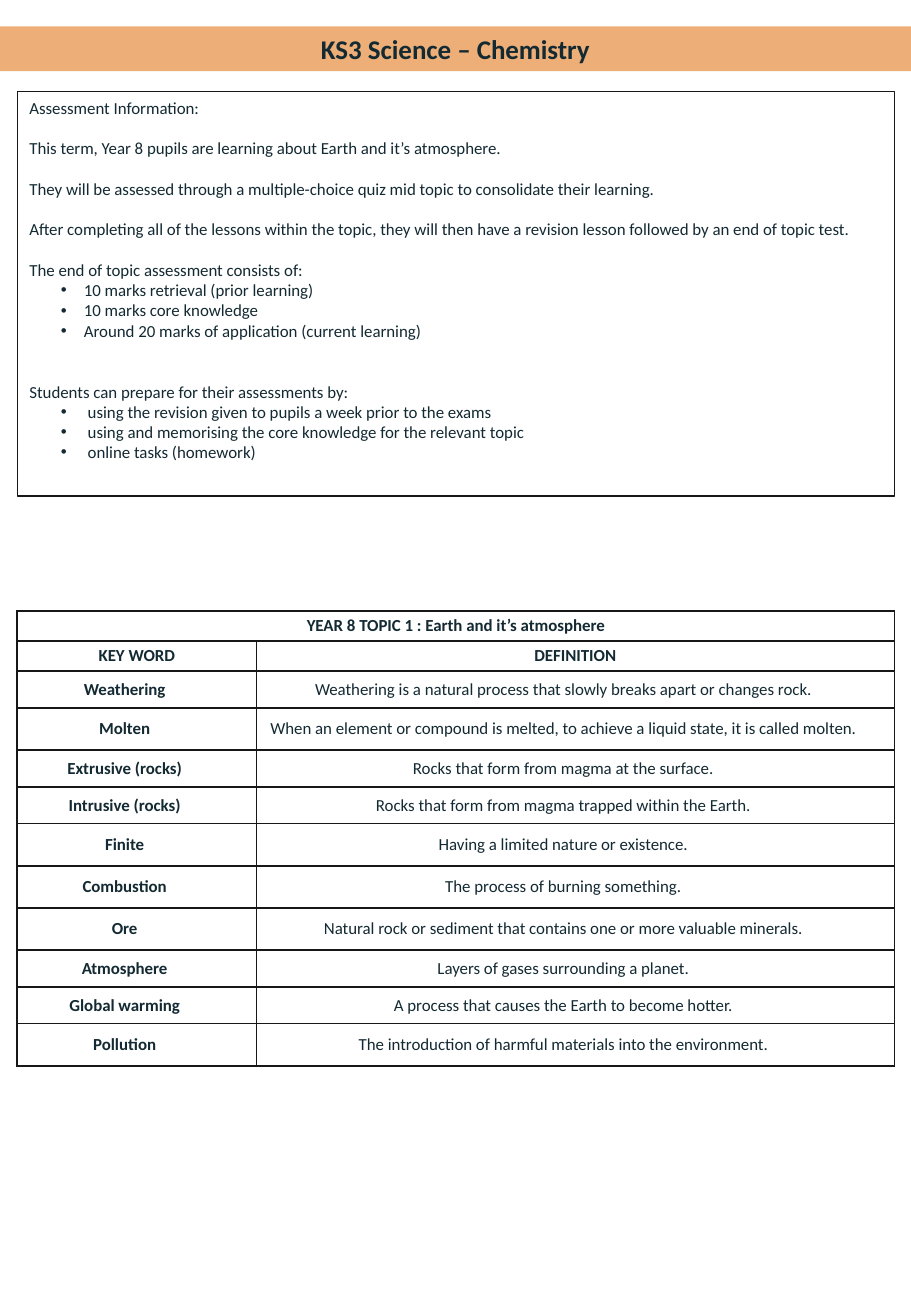
from dataclasses import dataclass
from typing import Any

from lxml import etree
from pptx import Presentation
from pptx.dml.color import RGBColor
from pptx.enum.text import MSO_ANCHOR, MSO_AUTO_SIZE, PP_ALIGN
from pptx.oxml.ns import qn
from pptx.util import Cm, Pt

LEFT, CENTER = PP_ALIGN.LEFT, PP_ALIGN.CENTER
TOP, MIDDLE = MSO_ANCHOR.TOP, MSO_ANCHOR.MIDDLE
NO_AUTOFIT = MSO_AUTO_SIZE.NONE

COLOURS = {"ink": "142A33", "border": "181717", "banner": "EDAF77"}
FONT = "Calibri"
TEXT_SIZE, TITLE_SIZE = 10, 16
LINE_GAP = 12  # one line of body text, in points
PAGE_LEFT, PAGE_WIDTH = 0.36, 18.34


@dataclass
class InfoLine:
    text: str
    gap_lines: int = 0
    bullet_indent: float = 0  # cm from the text edge; 0 means no bullet


@dataclass
class KeyWord:
    word: str
    definition: str
    height: float


MARKS_INDENT, ADVICE_INDENT = 1.14, 1.22
BULLET_LEFT = 0.66
INFO_LINES = [
    InfoLine("Assessment Information:"),
    InfoLine("This term, Year 8 pupils are learning about Earth and it’s atmosphere.", 1),
    InfoLine("They will be assessed through a multiple-choice quiz mid topic to consolidate their learning.", 1),
    InfoLine("After completing all of the lessons within the topic, they will then have a revision lesson "
             "followed by an end of topic test.", 1),
    InfoLine("The end of topic assessment consists of:", 1),
    InfoLine("10 marks retrieval (prior learning)", 0, MARKS_INDENT),
    InfoLine("10 marks core knowledge", 0, MARKS_INDENT),
    InfoLine("Around 20 marks of application (current learning)", 0, MARKS_INDENT),
    InfoLine("Students can prepare for their assessments by:", 2),
    InfoLine("using the revision given to pupils a week prior to the exams", 0, ADVICE_INDENT),
    InfoLine("using and memorising the core knowledge for the relevant topic", 0, ADVICE_INDENT),
    InfoLine("online tasks (homework)", 0, ADVICE_INDENT),
]

HEADING_ROW, SHORT_ROW, TALL_ROW = 0.63, 0.77, 0.88
COLUMN_WIDTHS = (5.0, 13.34)
TOPIC = "YEAR 8 TOPIC 1 : Earth and it’s atmosphere"
KEY_WORDS = [
    KeyWord("Weathering", "Weathering is a natural process that slowly breaks apart or changes rock.", SHORT_ROW),
    KeyWord("Molten", "When an element or compound is melted, to achieve a liquid state, it is called molten.",
            TALL_ROW),
    KeyWord("Extrusive (rocks)", "Rocks that form from magma at the surface.", SHORT_ROW),
    KeyWord("Intrusive (rocks)", "Rocks that form from magma trapped within the Earth.", SHORT_ROW),
    KeyWord("Finite", "Having a limited nature or existence.", TALL_ROW),
    KeyWord("Combustion", "The process of burning something.", TALL_ROW),
    KeyWord("Ore", "Natural rock or sediment that contains one or more valuable minerals.", TALL_ROW),
    KeyWord("Atmosphere", "Layers of gases surrounding a planet.", SHORT_ROW),
    KeyWord("Global warming", "A process that causes the Earth to become hotter.", SHORT_ROW),
    KeyWord("Pollution", "The introduction of harmful materials into the environment.", TALL_ROW),
]

HEADING_CELL = {"margin_left": Cm(0.2), "margin_right": Cm(0.2), "margin_top": Cm(0.1),
                "margin_bottom": Cm(0.1), "vertical_anchor": MIDDLE}
KEY_WORD_CELL = {"margin_left": Cm(0.18), "margin_right": Cm(0.69), "margin_top": 0,
                 "margin_bottom": 0, "vertical_anchor": MIDDLE}


def apply_format(target: Any, values: dict[str, Any]) -> None:
    for attribute, value in values.items():
        setattr(target, attribute, value)


def colour(name: str) -> RGBColor:
    return RGBColor.from_string(COLOURS[name])


def write(paragraph: Any, text: str, align: Any, size: float = TEXT_SIZE, bold: bool = False,
          space_before: float = 0) -> None:
    apply_format(paragraph, {"alignment": align, "space_before": Pt(space_before), "space_after": Pt(0)})
    run = paragraph.add_run()
    run.text = text
    apply_format(run.font, {"name": FONT, "size": Pt(size), "bold": bold})
    run.font.color.rgb = colour("ink")


def place(placeholder: Any, top: float, left: float, width: float, height: float, anchor: Any) -> None:
    apply_format(placeholder, {"left": Cm(left), "top": Cm(top), "width": Cm(width), "height": Cm(height)})
    apply_format(placeholder.text_frame, {"word_wrap": True, "auto_size": NO_AUTOFIT, "vertical_anchor": anchor})


def set_bullet(paragraph: Any, indent: float) -> None:
    properties = paragraph._p.get_or_add_pPr()
    properties.set("marL", str(Cm(indent)))
    properties.set("indent", str(Cm(BULLET_LEFT) - Cm(indent) if indent else 0))
    if indent:
        etree.SubElement(properties, qn("a:buFont"), typeface="Arial")
        etree.SubElement(properties, qn("a:buChar"), char="•")
    else:
        etree.SubElement(properties, qn("a:buNone"))


def set_borders(cell: Any) -> None:
    properties = cell._tc.get_or_add_tcPr()
    for side in ("lnL", "lnR", "lnT", "lnB"):
        border = etree.SubElement(properties, qn(f"a:{side}"), w=str(Pt(1)))
        fill = etree.SubElement(border, qn("a:solidFill"))
        etree.SubElement(fill, qn("a:srgbClr"), val=COLOURS["border"])


def fill_cell(cell: Any, text: str, cell_format: dict[str, Any], bold: bool) -> None:
    set_borders(cell)
    cell.fill.background()
    apply_format(cell, cell_format)
    if text:
        write(cell.text_frame.paragraphs[0], text, CENTER, bold=bold)


def draw_banner(banner: Any) -> None:
    place(banner, 0.55, 0, 19.05, 0.94, MIDDLE)
    banner.fill.solid()
    banner.fill.fore_color.rgb = colour("banner")
    write(banner.text_frame.paragraphs[0], "KS3 Science – Chemistry", CENTER, TITLE_SIZE, True)


def draw_assessment_info(info: Any) -> None:
    place(info, 1.91, PAGE_LEFT, PAGE_WIDTH, 8.46, TOP)
    info.line.color.rgb = colour("border")
    info.line.width = Pt(0.75)
    frame = info.text_frame
    for index, line in enumerate(INFO_LINES):
        paragraph = frame.add_paragraph() if index else frame.paragraphs[0]
        paragraph.level = 1 if line.bullet_indent else 0
        set_bullet(paragraph, line.bullet_indent)
        write(paragraph, line.text, LEFT, space_before=line.gap_lines * LINE_GAP)


def draw_glossary(slide: Any) -> None:
    heights = [HEADING_ROW] * 2 + [entry.height for entry in KEY_WORDS]
    glossary = slide.shapes.add_table(len(heights), len(COLUMN_WIDTHS), Cm(PAGE_LEFT), Cm(12.77),
                                      Cm(PAGE_WIDTH), Cm(sum(heights))).table
    apply_format(glossary, {"first_row": False, "horz_banding": False})
    for column, width in zip(glossary.columns, COLUMN_WIDTHS):
        column.width = Cm(width)
    for row, height in zip(glossary.rows, heights):
        row.height = Cm(height)

    # Topic and column headings, then the key words
    glossary.cell(0, 0).merge(glossary.cell(0, 1))
    headings = [(TOPIC, ""), ("KEY WORD", "DEFINITION")]
    entries = [(entry.word, entry.definition) for entry in KEY_WORDS]
    for row_index, texts in enumerate(headings + entries):
        is_heading = row_index < len(headings)
        cell_format = HEADING_CELL if is_heading else KEY_WORD_CELL
        for column_index, text in enumerate(texts):
            fill_cell(glossary.cell(row_index, column_index), text, cell_format,
                      bold=is_heading or column_index == 0)


def main() -> None:
    presentation = Presentation()
    apply_format(presentation, {"slide_width": Cm(19.05), "slide_height": Cm(27.51)})
    slide = presentation.slides.add_slide(presentation.slide_layouts[1])
    draw_banner(slide.shapes.title)
    draw_assessment_info(slide.placeholders[1])
    draw_glossary(slide)
    presentation.save("out.pptx")


if __name__ == "__main__":
    main()
